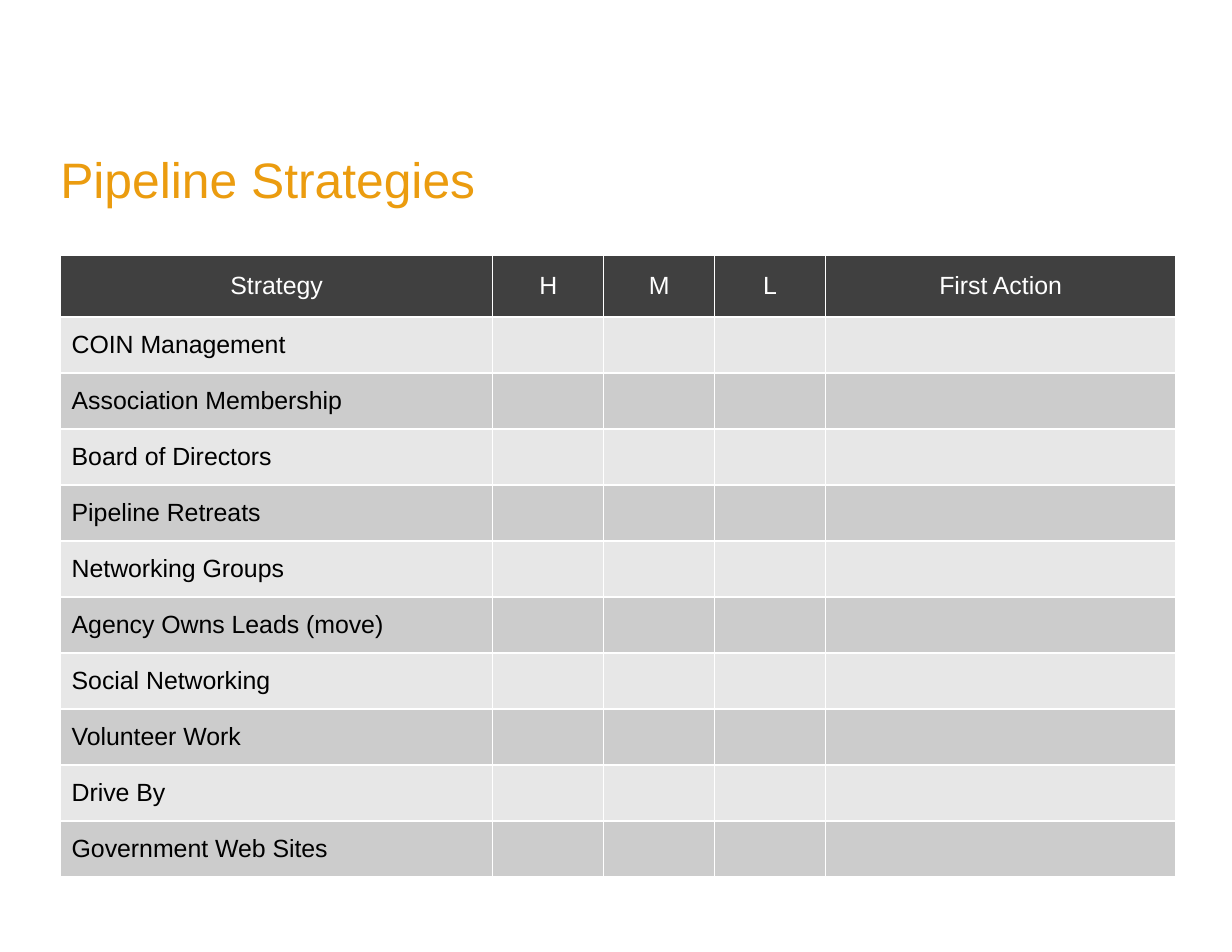
import pptx
import pptx.dml.color
import pptx.enum.text
import pptx.oxml
import pptx.oxml.ns
import pptx.util
from pptx.util import Inches

COLORS = {
    "title": "EB9C0F",
    "header": "404040",
    "light": "E7E7E7",
    "dark": "CCCCCC",
    "white": "FFFFFF",
    "black": "000000",
}
FONT = "Arial"
HEADERS = ["Strategy", "H", "M", "L", "First Action"]
STRATEGIES = [
    "COIN Management",
    "Association Membership",
    "Board of Directors",
    "Pipeline Retreats",
    "Networking Groups",
    "Agency Owns Leads (move)",
    "Social Networking",
    "Volunteer Work",
    "Drive By",
    "Government Web Sites",
]
COLUMN_WIDTHS = [3.86, 0.99, 0.99, 0.99, 3.13]
HEADER_HEIGHT, ROW_HEIGHT = 0.55, 0.5
ALIGN = pptx.enum.text.PP_ALIGN


def rgb(name):
    return pptx.dml.color.RGBColor.from_string(COLORS[name])


def write_text(frame, text, size=16, color="black", align=ALIGN.LEFT):
    para = frame.paragraphs[0]
    para.alignment = align
    span = para.add_run()
    span.text = text
    span.font.name = FONT
    span.font.size = pptx.util.Pt(size)
    span.font.color.rgb = rgb(color)


def set_borders(cell, color="white", width=1):
    properties = cell._tc.get_or_add_tcPr()
    for side in ("lnL", "lnR", "lnT", "lnB"):
        properties.append(pptx.oxml.parse_xml(
            f'<a:{side} {pptx.oxml.ns.nsdecls("a")} w="{pptx.util.Pt(width)}">'
            f'<a:solidFill><a:srgbClr val="{COLORS[color]}"/></a:solidFill>'
            f'</a:{side}>'))


def style_cell(cell, fill):
    set_borders(cell)
    cell.fill.solid()
    cell.fill.fore_color.rgb = rgb(fill)
    cell.vertical_anchor = pptx.enum.text.MSO_ANCHOR.MIDDLE


def add_title(page, text):
    box = page.shapes.add_textbox(
        Inches(0.44), Inches(1.28), Inches(4.04), Inches(0.64))
    box.text_frame.word_wrap = False
    box.text_frame.auto_size = pptx.enum.text.MSO_AUTO_SIZE.SHAPE_TO_FIT_TEXT
    write_text(box.text_frame, text, size=32, color="title")


def add_strategy_table(page):
    height = HEADER_HEIGHT + ROW_HEIGHT * len(STRATEGIES)
    table = page.shapes.add_table(
        len(STRATEGIES) + 1, len(HEADERS), Inches(0.54), Inches(2.28),
        Inches(sum(COLUMN_WIDTHS)), Inches(height)).table
    for column, width in zip(table.columns, COLUMN_WIDTHS):
        column.width = Inches(width)
    for index, row in enumerate(table.rows):
        row.height = Inches(ROW_HEIGHT if index else HEADER_HEIGHT)
        band = "light" if index % 2 else "dark"
        for cell in row.cells:
            style_cell(cell, band if index else "header")
    for column, header in enumerate(HEADERS):
        write_text(table.cell(0, column).text_frame, header,
                   color="white", align=ALIGN.CENTER)
    for index, strategy in enumerate(STRATEGIES, start=1):
        write_text(table.cell(index, 0).text_frame, strategy)


def main():
    deck = pptx.Presentation()
    deck.slide_width = Inches(11)
    deck.slide_height = Inches(8.5)
    page = deck.slides.add_slide(deck.slide_layouts[6])
    add_title(page, "Pipeline Strategies")
    add_strategy_table(page)
    deck.save("out.pptx")


if __name__ == "__main__":
    main()
